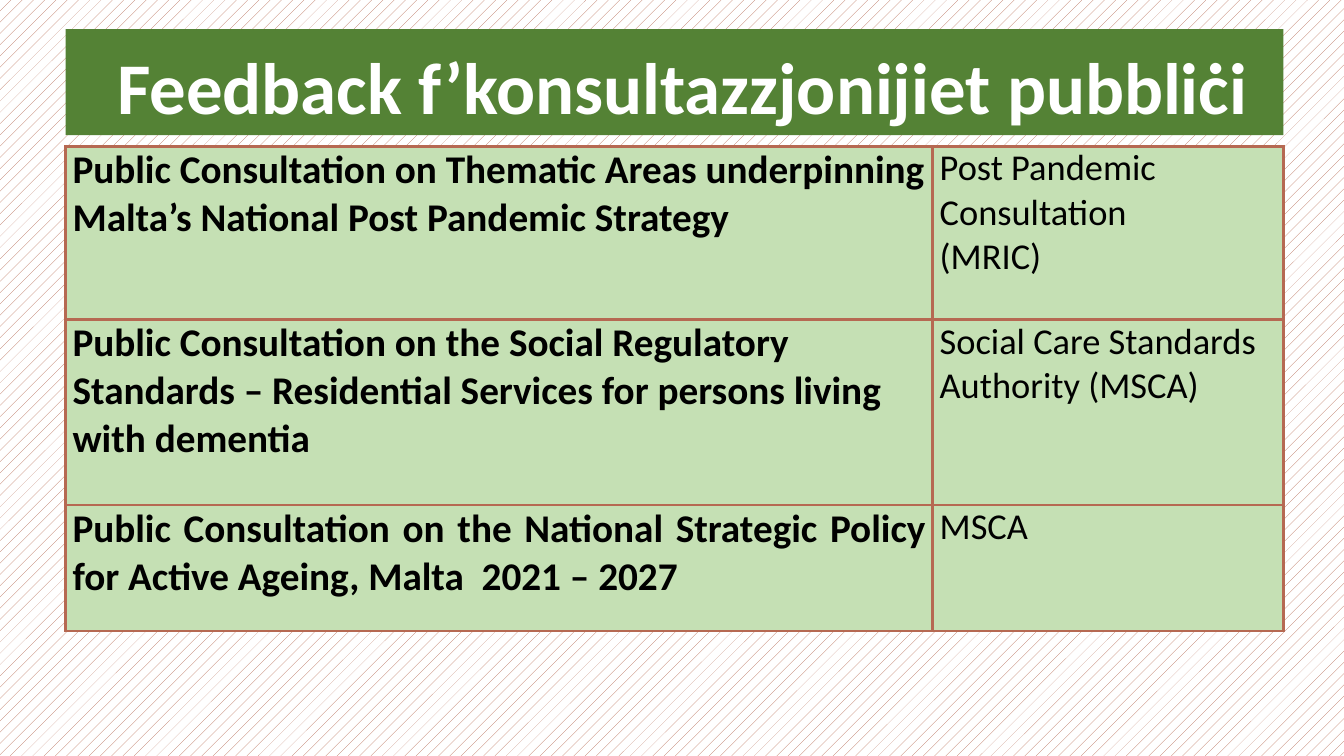
from dataclasses import dataclass

from lxml import etree
from pptx import Presentation
from pptx.dml.color import RGBColor
from pptx.enum.dml import MSO_PATTERN
from pptx.enum.shapes import MSO_SHAPE
from pptx.enum.text import MSO_ANCHOR, PP_ALIGN
from pptx.oxml.ns import qn
from pptx.util import Inches, Pt

LEFT, CENTER, JUSTIFY = PP_ALIGN.LEFT, PP_ALIGN.CENTER, PP_ALIGN.JUSTIFY
MIDDLE, TOP = MSO_ANCHOR.MIDDLE, MSO_ANCHOR.TOP
RECTANGLE = MSO_SHAPE.RECTANGLE
DOTTED = MSO_PATTERN.PERCENT_10


@dataclass(frozen=True)
class Theme:
    font: str = "Calibri"
    white: str = "FFFFFF"
    black: str = "000000"
    banner: str = "548235"
    cell: str = "C5E0B4"
    border: str = "B66952"
    title_size: int = 52
    topic_size: int = 28
    body_size: int = 26
    border_width: float = 2.25


THEME = Theme()
LEFT_EDGE, CONTENT_WIDTH = 0.65, 12.08
COLUMN_WIDTHS = (8.6, 3.48)
ROW_HEIGHTS = (1.72, 1.84, 1.25)
CONSULTATIONS = (
    ("Public Consultation on Thematic Areas underpinning Malta’s National Post Pandemic Strategy",
     ("Post Pandemic Consultation", "(MRIC)"), {}),
    ("Public Consultation on the Social Regulatory Standards – Residential Services "
     "for persons living with dementia",
     ("Social Care Standards Authority (MSCA)",), {"before": 8.1}),
    ("Public Consultation on the National Strategic Policy for Active Ageing, Malta  2021 – 2027",
     ("MSCA",), {"align": JUSTIFY}),
)


def color(value):
    return RGBColor.from_string(value)


def write(para, text, *, size, ink=THEME.black, bold=False, align=LEFT,
          before=0, after=0, spacing=1.0):
    para.alignment = align
    para.space_before = Pt(before)
    para.space_after = Pt(after)
    para.line_spacing = spacing
    span = para.add_run()
    span.text = text
    span.font.name = THEME.font
    span.font.size = Pt(size)
    span.font.bold = bold
    span.font.color.rgb = color(ink)


def paint_background(page):
    fill = page.background.fill
    fill.patterned()
    fill.pattern = DOTTED
    fill.fore_color.rgb = color(THEME.border)
    fill.back_color.rgb = color(THEME.white)


def add_banner(page, text):
    box = page.shapes.add_shape(RECTANGLE, Inches(LEFT_EDGE), Inches(0.29),
                                Inches(CONTENT_WIDTH), Inches(1.05))
    box.shadow.inherit = False
    box.fill.solid()
    box.fill.fore_color.rgb = color(THEME.banner)
    box.line.fill.background()
    frame = box.text_frame
    frame.word_wrap = True
    frame.vertical_anchor = MIDDLE
    write(frame.paragraphs[0], text, size=THEME.title_size, ink=THEME.white,
          bold=True, align=CENTER, after=8, spacing=1.07)


def add_borders(cell):
    properties = cell._tc.get_or_add_tcPr()
    for side in ("lnL", "lnR", "lnT", "lnB"):
        line = etree.SubElement(properties, qn(f"a:{side}"), w=str(Pt(THEME.border_width)))
        fill = etree.SubElement(line, qn("a:solidFill"))
        etree.SubElement(fill, qn("a:srgbClr"), val=THEME.border)


def fill_cell(cell, lines, **style):
    add_borders(cell)
    cell.fill.solid()
    cell.fill.fore_color.rgb = color(THEME.cell)
    cell.margin_left = cell.margin_right = Inches(0.07)
    cell.margin_top = cell.margin_bottom = 0
    cell.vertical_anchor = TOP
    frame = cell.text_frame
    for index, text in enumerate(lines):
        para = frame.add_paragraph() if index else frame.paragraphs[0]
        write(para, text, **style)


def add_consultations(page):
    table = page.shapes.add_table(
        len(CONSULTATIONS), len(COLUMN_WIDTHS), Inches(LEFT_EDGE), Inches(1.45),
        Inches(CONTENT_WIDTH), Inches(sum(ROW_HEIGHTS))).table
    table.first_row = table.horz_banding = False
    for column, width in zip(table.columns, COLUMN_WIDTHS):
        column.width = Inches(width)
    for row, height, (topic, source, layout) in zip(table.rows, ROW_HEIGHTS, CONSULTATIONS):
        row.height = Inches(height)
        topic_cell, source_cell = row.cells
        fill_cell(topic_cell, (topic,), size=THEME.topic_size, bold=True, **layout)
        fill_cell(source_cell, source, size=THEME.body_size)


def main():
    deck = Presentation()
    deck.slide_width, deck.slide_height = Inches(13.33), Inches(7.5)
    page = deck.slides.add_slide(deck.slide_layouts[6])
    paint_background(page)
    add_consultations(page)
    add_banner(page, " Feedback f’konsultazzjonijiet pubbliċi")
    deck.save("out.pptx")


if __name__ == "__main__":
    main()
